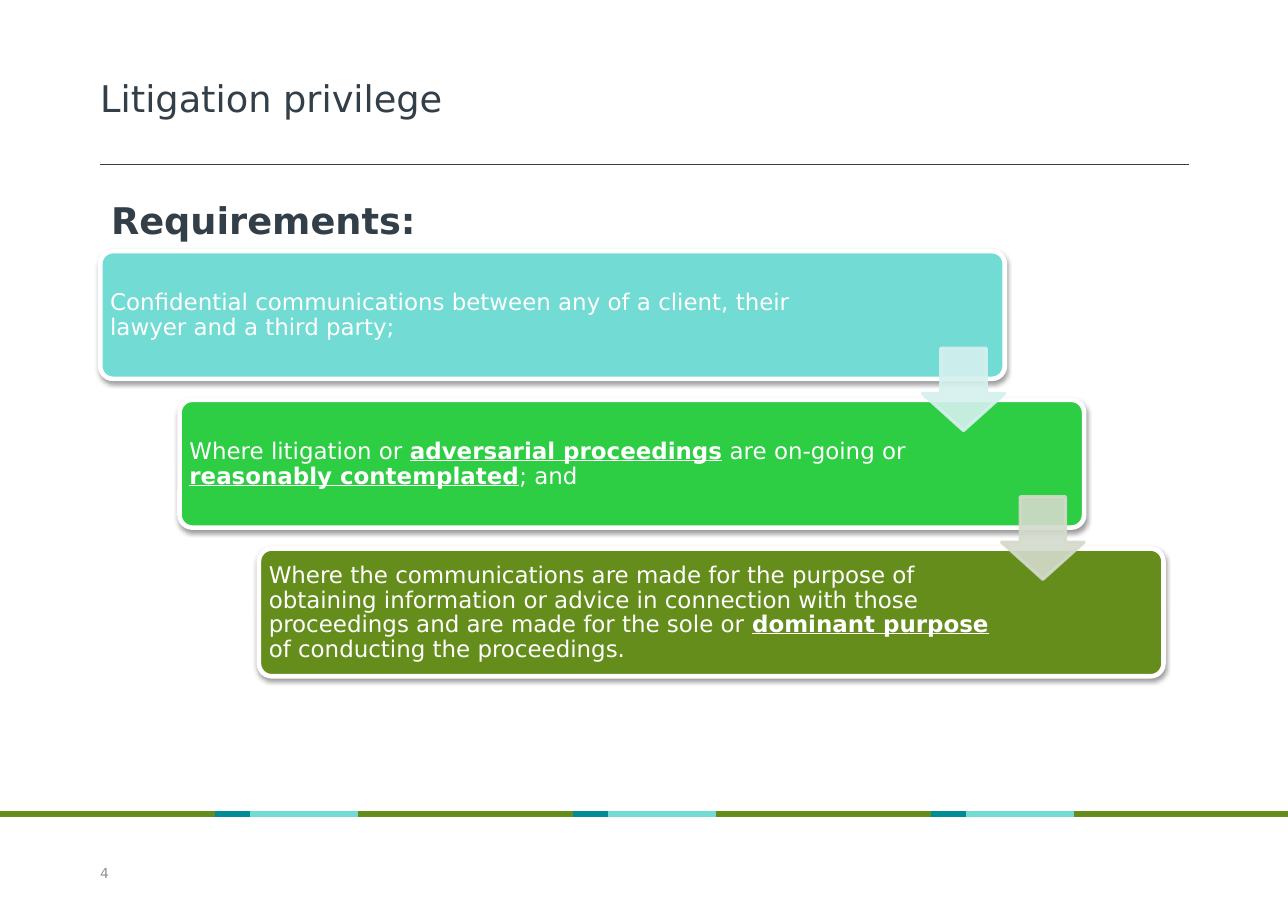
from lxml.etree import SubElement
from pptx import Presentation
from pptx.dml.color import RGBColor as RGB
from pptx.enum.shapes import MSO_CONNECTOR as LINK, MSO_SHAPE as SHAPE
from pptx.enum.text import MSO_ANCHOR as ANCHOR
from pptx.oxml.ns import qn
from pptx.util import Pt

SCALE = 9144
WIDTH, HEIGHT = 1169, 827
FONT = "DejaVu Sans"
COLORS = {
    "ink": "333F48", "grey": "909395", "white": "FFFFFF", "black": "000000",
    "olive": "658D1B", "teal": "008C95", "aqua": "71DBD4", "green": "2DCD44",
    "pale_aqua": "D5F1EF", "pale_olive": "D3DBCC",
}
STEPS = [
    ("aqua", 696, [
        ("Confidential communications between any of a client, their lawyer and a third party;", False),
    ]),
    ("green", 667, [
        ("Where litigation or ", False), ("adversarial proceedings", True),
        (" are on-going or ", False), ("reasonably contemplated", True), ("; and", False),
    ]),
    ("olive", 667, [
        ("Where the communications are made for the purpose of obtaining information or advice "
         "in connection with those proceedings and are made for the sole or ", False),
        ("dominant purpose", True), (" of conducting the proceedings.", False),
    ]),
]
ARROWS = ["pale_aqua", "pale_olive"]


def px(*lengths):
    return [length * SCALE for length in lengths]


def color(name):
    return RGB.from_string(COLORS[name])


def add_rule(slide, x1, x2, y, name, weight):
    rule = slide.shapes.add_connector(LINK.STRAIGHT, *px(x1, y, x2, y))
    rule.line.color.rgb = color(name)
    rule.line.width = Pt(weight)
    SubElement(rule._element.spPr, qn("a:effectLst"))


def add_text(slide, box, segments, size, name, anchor, margins=(0, 0), wrap=True):
    label = slide.shapes.add_textbox(*px(*box))
    frame = label.text_frame
    frame.word_wrap = wrap
    frame.vertical_anchor = anchor
    frame.margin_left, frame.margin_top = px(*margins)
    frame.margin_right, frame.margin_bottom = px(*margins)
    paragraph = frame.paragraphs[0]
    for words, strong in segments:
        run = paragraph.add_run()
        run.text = words
        run.font.name = FONT
        run.font.size = Pt(size)
        run.font.color.rgb = color(name)
        run.font.bold = strong
    return paragraph


def add_block(slide, kind, box, adjustments, fill, border, weight):
    block = slide.shapes.add_shape(kind, *px(*box))
    for index, value in enumerate(adjustments):
        block.adjustments[index] = value
    block.shadow.inherit = False
    block.fill.solid()
    block.fill.fore_color.rgb = color(fill)
    block.line.color.rgb = color(border)
    block.line.width = Pt(weight)
    return block


def add_stripe(slide, left, y, width):
    bands = [("olive", 195), ("teal", 32), ("aqua", 98)]
    x, index, right = left, 0, left + width
    while x < right:
        name, length = bands[index % len(bands)]
        end = min(x + length, right)
        add_rule(slide, x, end, y, name, 4)
        x, index = end, index + 1


def add_heading(slide, left, top, width):
    add_text(slide, (left, top, width, 43), [("Litigation privilege", False)], 24, "ink", ANCHOR.MIDDLE)
    add_rule(slide, left, left + width, top + 82, "ink", 0.25)
    add_text(slide, (left, top + 108, 574, 50), [("Requirements:", True)], 24, "ink", ANCHOR.TOP, (10, 5))


def add_step(slide, left, top, width, height, fill, text_width, segments):
    card = add_block(slide, SHAPE.ROUNDED_RECTANGLE, (left, top, width, height), [0.1], fill, "white", 3)
    effects = card._element.spPr.find(qn("a:effectLst"))
    shadow = SubElement(effects, qn("a:outerShdw"), blurRad="40000", dist="20000", dir="5400000", rotWithShape="0")
    shade = SubElement(shadow, qn("a:srgbClr"), val=COLORS["black"])
    SubElement(shade, qn("a:alpha"), val="38000")
    paragraph = add_text(slide, (left + 3, top + 4, text_width, height - 7), segments,
                         15, "white", ANCHOR.MIDDLE, (6, 6))
    paragraph.line_spacing = 0.9
    for run, (_, strong) in zip(paragraph.runs, segments):
        run.font.underline = strong


def add_arrow(slide, left, top, size, name):
    arrow = add_block(slide, SHAPE.DOWN_ARROW, (left, top, size, size), [0.45, 0.55], name, name, 2)
    arrow.adjustments[0], arrow.adjustments[1] = 0.55, 0.45
    for paint in arrow._element.spPr.iter(qn("a:srgbClr")):
        SubElement(paint, qn("a:alpha"), val="90000")


def add_staircase(slide, left, top, width, height):
    step_x, step_y, arrow_size = 72, 135, 75
    for index, step in enumerate(STEPS):
        add_step(slide, left + index * step_x, top + index * step_y, width, height, *step)
    for index, name in enumerate(ARROWS):
        add_arrow(slide, left + index * step_x + width - arrow_size,
                  top + index * step_y + 88, arrow_size, name)


def main():
    deck = Presentation()
    deck.slide_width, deck.slide_height = px(WIDTH, HEIGHT)
    slide = deck.slides.add_slide(deck.slide_layouts[6])
    add_stripe(slide, 0, 739, WIDTH)
    add_heading(slide, 91, 67, 988)
    add_staircase(slide, 91, 228, 821, 116)
    add_text(slide, (91, 772, 28, 28), [("4", False)], 9, "grey", ANCHOR.BOTTOM, wrap=False)
    deck.save("out.pptx")


if __name__ == "__main__":
    main()
